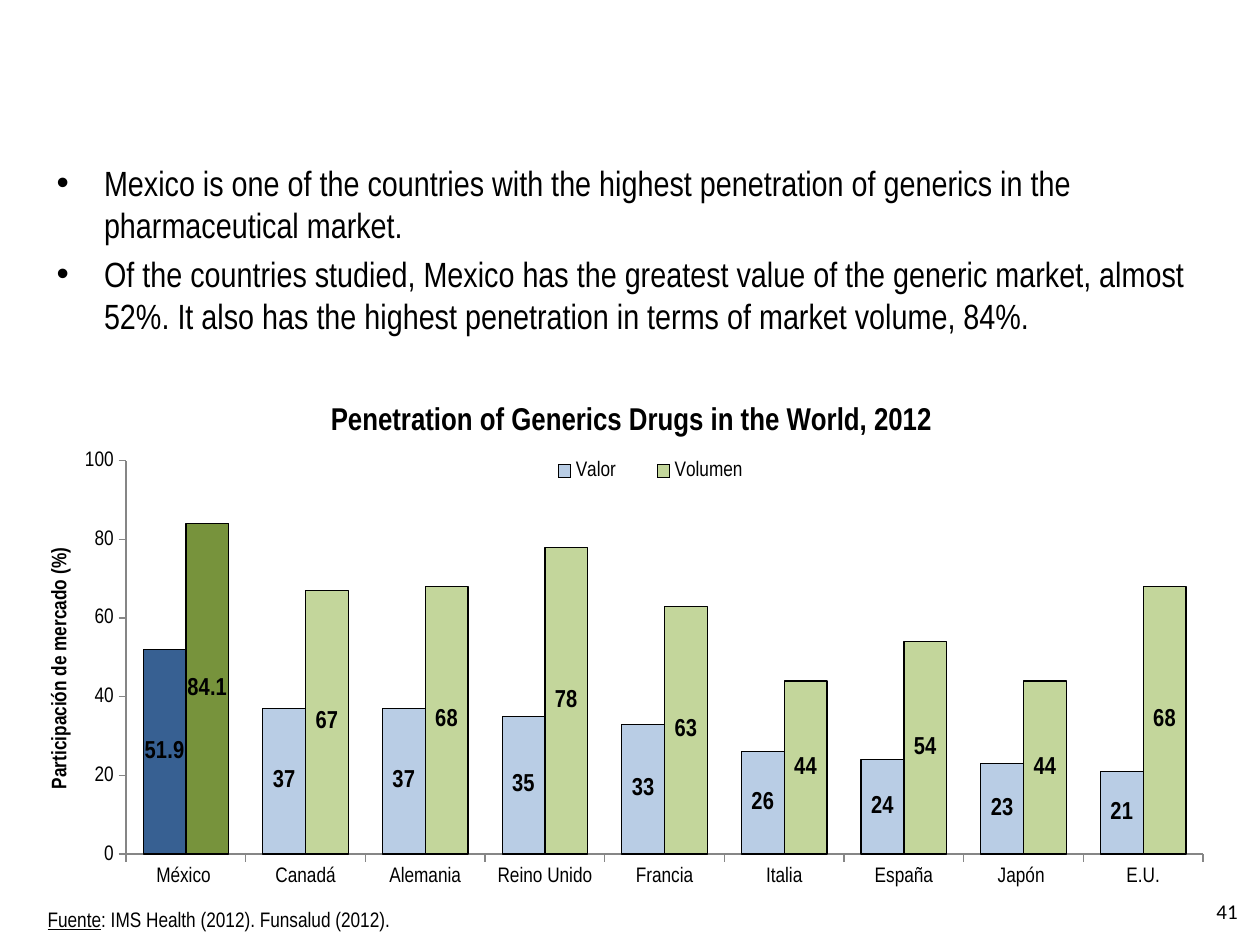
from dataclasses import dataclass
from typing import Optional

from lxml.etree import SubElement, Element
from pptx import Presentation
from pptx.chart.data import CategoryChartData
from pptx.dml.color import RGBColor
from pptx.enum.chart import (XL_CHART_TYPE, XL_LABEL_POSITION,
                             XL_LEGEND_POSITION, XL_TICK_MARK)
from pptx.enum.text import MSO_ANCHOR, MSO_AUTO_SIZE, PP_ALIGN
from pptx.oxml.ns import qn
from pptx.util import Cm, Pt


@dataclass(frozen=True)
class Theme:
    font: str = "Arial Narrow"
    number_font: str = "Calibri"
    text: str = "000000"
    axis: str = "868686"
    body_size: int = 20
    title_size: int = 18
    label_size: int = 14
    small_size: int = 12


@dataclass(frozen=True)
class Series:
    name: str
    values: tuple[float, ...]
    color: str
    mexico_color: str


@dataclass(frozen=True)
class Layout:
    """Position within the chart, as fractions of its size."""
    x: float
    y: float
    width: Optional[float] = None
    height: Optional[float] = None
    inner: bool = False


THEME = Theme()
BULLETS = (
    "Mexico is one of the countries with the highest penetration of generics "
    "in the pharmaceutical market.",
    "Of the countries studied, Mexico has the greatest value of the generic "
    "market, almost 52%. It also has the highest penetration in terms of "
    "market volume, 84%.",
)
COUNTRIES = ("México ", "Canadá", "Alemania", "Reino Unido", "Francia",
             "Italia", "España", "Japón ", "E.U.")
SERIES = (
    Series("Valor", (51.9, 37, 37, 35, 33, 26, 24, 23, 21), "B9CDE5", "376092"),
    Series("Volumen ", (84.1, 67, 68, 78, 63, 44, 54, 44, 68), "C3D69B", "77933C"),
)


def style_font(font, size: int, name: str = THEME.font, bold: bool = False) -> None:
    font.name = name
    font.size = Pt(size)
    font.bold = bold
    font.color.rgb = RGBColor.from_string(THEME.text)


def add_run(paragraph, text: str, size: int, name: str = THEME.font,
            bold: bool = False):
    run = paragraph.add_run()
    run.text = text
    style_font(run.font, size, name, bold)
    return run


def place(element, layout: Layout) -> None:
    """Give a chart part a manual layout."""
    for old in element.findall(qn("c:layout")):
        element.remove(old)
    holder = Element(qn("c:layout"))
    manual = SubElement(holder, qn("c:manualLayout"))
    settings = {"layoutTarget": "inner" if layout.inner else None,
                "xMode": "edge", "yMode": "edge", "x": layout.x, "y": layout.y,
                "w": layout.width, "h": layout.height}
    for tag, value in settings.items():
        if value is not None:
            SubElement(manual, qn(f"c:{tag}")).set("val", str(value))
    overlay = element.find(qn("c:overlay"))
    if overlay is None:
        element.insert(0, holder)
    else:
        overlay.addprevious(holder)


def add_bullets(slide) -> None:
    slide.shapes._spTree.remove(slide.shapes.title._element)
    body = slide.placeholders[1]
    body.left, body.top, body.width, body.height = Cm(0.89), Cm(3.12), Cm(23.6), Cm(4.6)
    frame = body.text_frame
    frame.auto_size = MSO_AUTO_SIZE.NONE
    for index, text in enumerate(BULLETS):
        paragraph = frame.add_paragraph() if index else frame.paragraphs[0]
        add_run(paragraph, text, THEME.body_size)


def style_axis(axis) -> None:
    axis.has_major_gridlines = False
    axis.major_tick_mark = XL_TICK_MARK.OUTSIDE
    axis.minor_tick_mark = XL_TICK_MARK.NONE
    axis.format.line.color.rgb = RGBColor.from_string(THEME.axis)
    style_font(axis.tick_labels.font, THEME.small_size)


def style_series(plot_series, series: Series) -> None:
    mexico = plot_series.points[0]
    for part, color in ((plot_series, series.color), (mexico, series.mexico_color)):
        part.format.fill.solid()
        part.format.fill.fore_color.rgb = RGBColor.from_string(color)
        part.format.line.color.rgb = RGBColor.from_string(THEME.text)
        part.format.line.width = Pt(0.75)
    labels = plot_series.data_labels
    labels.show_value = True
    labels.position = XL_LABEL_POSITION.CENTER
    style_font(labels.font, THEME.label_size, bold=True)


def add_penetration_chart(slide) -> None:
    data = CategoryChartData()
    data.categories = COUNTRIES
    for series in SERIES:
        data.add_series(series.name, series.values)
    chart = slide.shapes.add_chart(XL_CHART_TYPE.COLUMN_CLUSTERED, Cm(0.89), Cm(7.72),
                                   Cm(23.6), Cm(10.44), data).chart
    style_font(chart.font, THEME.small_size)

    title = chart.chart_title
    add_run(title.text_frame.paragraphs[0],
            "Penetration of Generics Drugs in the World, 2012",
            THEME.title_size, bold=True)
    title._element.find(qn("c:overlay")).set("val", "1")
    place(title._element, Layout(0.24, 0.03))

    chart.has_legend = True
    chart.legend.position = XL_LEGEND_POSITION.RIGHT
    chart.legend.include_in_layout = False
    style_font(chart.legend.font, THEME.small_size)
    place(chart.legend._element, Layout(0.41, 0.14, 0.22, 0.06))

    style_axis(chart.category_axis)
    value_axis = chart.value_axis
    style_axis(value_axis)
    value_axis.minimum_scale, value_axis.maximum_scale = 0, 100
    value_axis.major_unit = 20
    add_run(value_axis.axis_title.text_frame.paragraphs[0],
            "Participación de mercado (%)", THEME.small_size, bold=True)

    plot = chart.plots[0]
    plot.gap_width = 80
    plot.overlap = 0
    plot.vary_by_categories = False
    for plot_series, series in zip(plot.series, SERIES):
        style_series(plot_series, series)
    place(plot._element.getparent(), Layout(0.07, 0.15, 0.92, 0.76, inner=True))


def add_slide_number(slide) -> None:
    frame = slide.shapes.add_textbox(Cm(19.3), Cm(17.93), Cm(5.9), Cm(0.86)).text_frame
    frame.word_wrap = True
    frame.vertical_anchor = MSO_ANCHOR.MIDDLE
    frame.paragraphs[0].alignment = PP_ALIGN.RIGHT
    add_run(frame.paragraphs[0], "41", THEME.small_size, THEME.number_font)


def add_source(slide) -> None:
    frame = slide.shapes.add_textbox(Cm(0.71), Cm(18.16), Cm(7.52), Cm(0.76)).text_frame
    frame.word_wrap = False
    frame.auto_size = MSO_AUTO_SIZE.SHAPE_TO_FIT_TEXT
    paragraph = frame.paragraphs[0]
    add_run(paragraph, "Fuente", THEME.small_size).font.underline = True
    add_run(paragraph, ": IMS Health (2012). Funsalud (2012).", THEME.small_size)


def main() -> None:
    presentation = Presentation()
    presentation.slide_width, presentation.slide_height = Cm(25.4), Cm(19.05)
    slide = presentation.slides.add_slide(presentation.slide_layouts[1])
    add_bullets(slide)
    add_slide_number(slide)
    add_penetration_chart(slide)
    add_source(slide)
    presentation.save("out.pptx")


if __name__ == "__main__":
    main()
